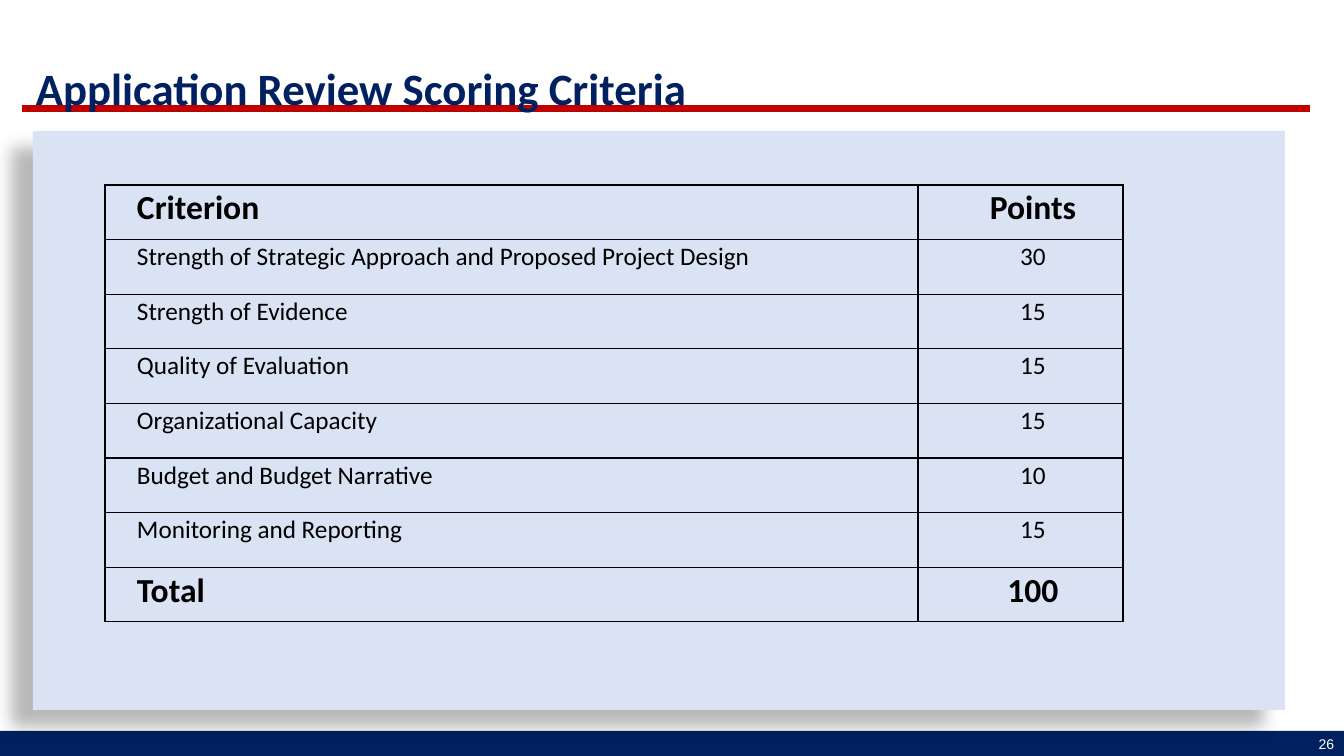
import dataclasses

import lxml.etree
import pptx
import pptx.dml.color
import pptx.enum.shapes
import pptx.enum.text
import pptx.oxml
import pptx.oxml.ns
import pptx.util

ALIGN = pptx.enum.text.PP_ALIGN
ANCHOR = pptx.enum.text.MSO_ANCHOR
DRAWING = pptx.oxml.ns.nsdecls("a")

CRITERIA = [
    ("Criterion", "Points"),
    ("Strength of Strategic Approach and Proposed Project Design", "30"),
    ("Strength of Evidence", "15"),
    ("Quality of Evaluation", "15"),
    ("Organizational Capacity", "15"),
    ("Budget and Budget Narrative", "10"),
    ("Monitoring and Reporting", "15"),
    ("Total", "100"),
]


@dataclasses.dataclass(frozen=True)
class Theme:
    """Colours, fonts and type sizes of the slide."""
    navy: str = "002060"
    red: str = "C00000"
    panel: str = "DAE3F3"
    black: str = "000000"
    white: str = "FFFFFF"
    font: str = "Calibri"
    number_font: str = "Arial"
    title: int = 32
    heading: int = 24
    body: int = 18
    number: int = 10


THEME = Theme()


def px(length):
    """Turn pixels into EMU."""
    return pptx.util.Emu(round(length * 914400 / 100.8))


def rgb(color):
    """Turn a hex string into a colour."""
    return pptx.dml.color.RGBColor.from_string(color)


def add_run(paragraph, text, size, color, bold=False, font=THEME.font):
    """Add one styled run to a paragraph."""
    run = paragraph.add_run()
    run.text = text
    run.font.name = font
    run.font.size = pptx.util.Pt(size)
    run.font.bold = bold
    run.font.color.rgb = rgb(color)


def add_text(slide, box, anchor, align):
    """Add a wrapping text box and return its paragraph."""
    frame = slide.shapes.add_textbox(*map(px, box)).text_frame
    frame.word_wrap = True
    frame.vertical_anchor = anchor
    paragraph = frame.paragraphs[0]
    paragraph.alignment = align
    return paragraph


def add_rectangle(slide, box, color):
    """Add a plain filled rectangle."""
    shape = slide.shapes.add_shape(
        pptx.enum.shapes.MSO_SHAPE.RECTANGLE, *map(px, box))
    shape.shadow.inherit = False
    shape.fill.solid()
    shape.fill.fore_color.rgb = rgb(color)
    shape.line.fill.background()
    return shape


def add_header(slide, box):
    """Draw the red rule and the title above it."""
    left, top, width, height = box
    rule_y = px(top + height - 10)
    rule = slide.shapes.add_connector(
        pptx.enum.shapes.MSO_CONNECTOR.STRAIGHT,
        px(left - 4), rule_y, px(left + width + 5), rule_y)
    rule.line.color.rgb = rgb(THEME.red)
    rule.line.width = pptx.util.Pt(5)
    lxml.etree.SubElement(rule._element.spPr, pptx.oxml.ns.qn("a:effectLst"))
    title = add_text(slide, box, ANCHOR.BOTTOM, ALIGN.LEFT)
    add_run(title, "Application Review Scoring Criteria",
            THEME.title, THEME.navy, bold=True)


def add_footer(slide, box):
    """Draw the navy band with the page number at its right end."""
    left, top, width, height = box
    add_rectangle(slide, box, THEME.navy)
    number_box = (left + width - 40, top, 40, height)
    number = add_text(slide, number_box, ANCHOR.MIDDLE, ALIGN.RIGHT)
    add_run(number, "26", THEME.number, THEME.white, font=THEME.number_font)


def cast_shadow(shape):
    """Give a shape a soft shadow to its lower left."""
    effects = shape._element.spPr.find(pptx.oxml.ns.qn("a:effectLst"))
    effects.append(pptx.oxml.parse_xml(
        f'<a:outerShdw {DRAWING} blurRad="{pptx.util.Pt(11.8)}" '
        f'dist="{pptx.util.Pt(19.7)}" dir="{141 * 60000}" algn="ctr" '
        f'rotWithShape="0"><a:srgbClr val="{THEME.black}">'
        '<a:alpha val="28000"/></a:srgbClr></a:outerShdw>'))


def add_borders(cell):
    """Rule all four sides of a table cell."""
    properties = cell._tc.get_or_add_tcPr()
    for index, side in enumerate("LRTB"):
        properties.insert(index, pptx.oxml.parse_xml(
            f'<a:ln{side} {DRAWING} w="{pptx.util.Pt(1)}"><a:solidFill>'
            f'<a:srgbClr val="{THEME.black}"/></a:solidFill></a:ln{side}>'))


def fill_cell(cell, text, align, emphasized):
    """Style one table cell and write its text."""
    cell.fill.background()
    add_borders(cell)
    cell.margin_left = cell.margin_right = px(7)
    cell.margin_top = cell.margin_bottom = 0
    paragraph = cell.text_frame.paragraphs[0]
    paragraph.alignment = align
    paragraph.line_spacing = 1.07
    paragraph.space_after = pptx.util.Pt(8)
    paragraph._p.get_or_add_pPr().set("marL", str(px(25)))
    size = THEME.heading if emphasized else THEME.body
    add_run(paragraph, text, size, THEME.black, bold=emphasized)


def add_criteria_table(slide, box):
    """Draw the scoring table with equal rows."""
    left, top, width, height = box
    points_width = 205
    table = slide.shapes.add_table(
        len(CRITERIA), 2, *map(px, box)).table
    table.first_row = table.horz_banding = False
    table.columns[0].width = px(width - points_width)
    table.columns[1].width = px(points_width)
    for index, entry in enumerate(CRITERIA):
        table.rows[index].height = px(height / len(CRITERIA))
        emphasized = index in (0, len(CRITERIA) - 1)
        for column, align in enumerate((ALIGN.LEFT, ALIGN.CENTER)):
            fill_cell(table.cell(index, column), entry[column],
                      align, emphasized)


def add_panel(slide, box):
    """Draw the shadowed panel holding the scoring table."""
    left, top, width, height = box
    cast_shadow(add_rectangle(slide, box, THEME.panel))
    add_criteria_table(slide, (left + 72, top + 54, 1018, height - 142))


def main():
    """Build and save the presentation."""
    presentation = pptx.Presentation()
    presentation.slide_width, presentation.slide_height = px(1344), px(756)
    slide = presentation.slides.add_slide(presentation.slide_layouts[6])
    add_header(slide, (26, 54, 1279, 65))
    add_footer(slide, (0, 731, 1344, 25))
    add_panel(slide, (33, 131, 1252, 579))
    presentation.save("out.pptx")


if __name__ == "__main__":
    main()
